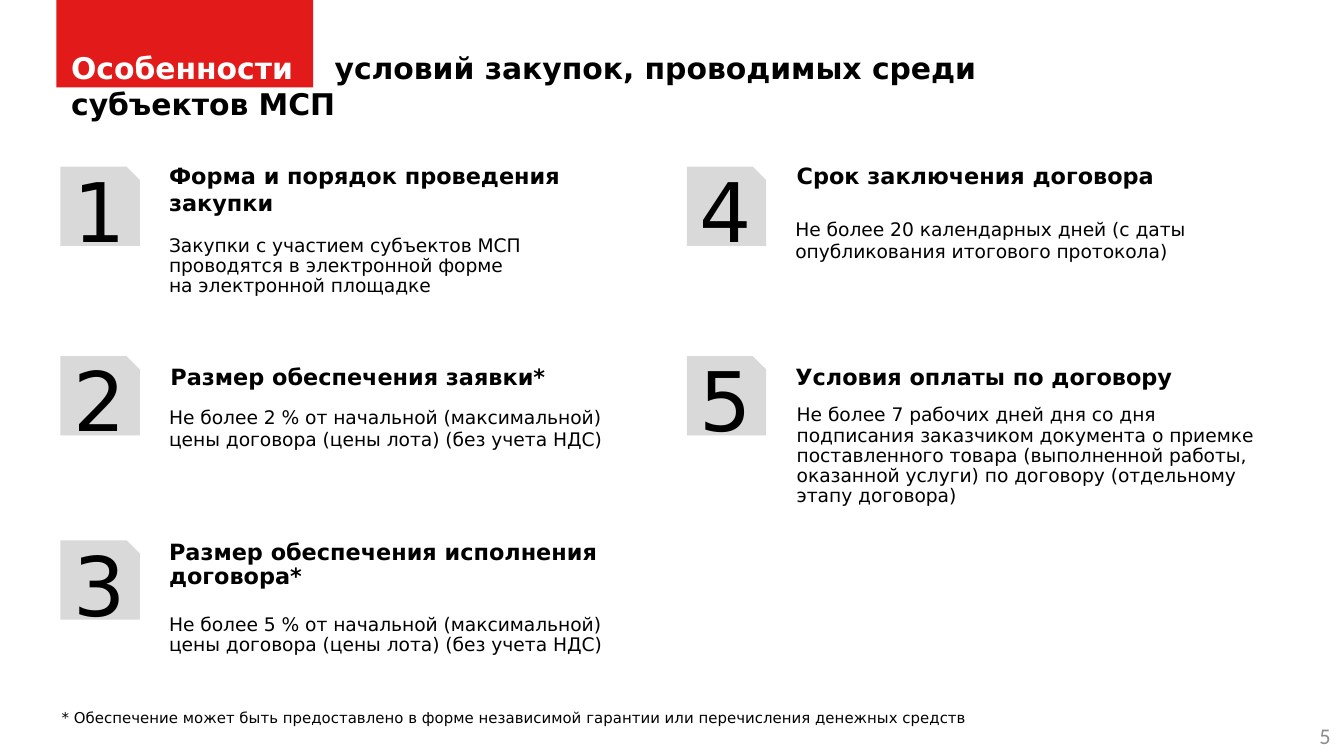
from typing import NamedTuple

from lxml.etree import SubElement
from pptx import Presentation
from pptx.dml.color import RGBColor
from pptx.enum.shapes import MSO_SHAPE
from pptx.enum.text import MSO_ANCHOR, MSO_AUTO_SIZE, PP_ALIGN
from pptx.oxml.ns import qn
from pptx.util import Inches, Pt

RED = RGBColor(0xE2, 0x1A, 0x1A)
BADGE_GRAY = RGBColor(0xD9, 0xD9, 0xD9)
NUMBER_GRAY = RGBColor(0x8C, 0x8C, 0x8C)
BLACK = RGBColor(0, 0, 0)
WHITE = RGBColor(0xFF, 0xFF, 0xFF)
MAIN_FONT = "DejaVu Sans"

COLUMN_LEFTS = (0.45, 5.11)
ROW_TOPS = (1.24, 2.65, 4.02)
ROWS = len(ROW_TOPS)
BADGE_SIZE = 0.59
TEXT_OFFSET = 0.71
TEXT_WIDTH = 3.7


class Block(NamedTuple):
    """A text with its top relative to the badge, height, spacing and shift."""
    text: str
    top: float
    height: float
    spacing: float = 1.0
    shift: float = 0.0


CONDITIONS = [
    (Block("Форма и порядок проведения закупки", -0.08, 0.51),
     Block("Закупки с участием субъектов МСП проводятся в электронной форме\n"
           "на электронной площадке", 0.47, 0.56, 0.9)),
    (Block("Размер обеспечения заявки*", 0, 0.3, shift=0.01),
     Block("Не более 2 % от начальной (максимальной) цены договора "
           "(цены лота) (без учета НДС)", 0.32, 0.44)),
    (Block("Размер обеспечения исполнения договора*", -0.04, 0.46, 0.9),
     Block("Не более 5 % от начальной (максимальной) цены договора "
           "(цены лота) (без учета НДС)", 0.51, 0.4, 0.9)),
    (Block("Срок заключения договора", -0.08, 0.3, shift=0.01),
     Block("Не более 20 календарных дней (с даты опубликования "
           "итогового протокола)", 0.33, 0.44)),
    (Block("Условия оплаты по договору", 0, 0.3),
     Block("Не более 7 рабочих дней дня со дня подписания заказчиком документа "
           "о приемке поставленного товара (выполненной работы, оказанной "
           "услуги) по договору (отдельному этапу договора)",
           0.32, 0.86, 0.9, 0.01)),
]


def add_run(paragraph, text, size, color=BLACK, bold=False, font=MAIN_FONT):
    run = paragraph.add_run()
    run.text = text
    run.font.size = Pt(size)
    run.font.name = font
    run.font.bold = bold
    run.font.color.rgb = color


def add_filled_shape(slide, preset, box, color):
    shape = slide.shapes.add_shape(preset, *map(Inches, box))
    shape.shadow.inherit = False
    shape.fill.solid()
    shape.fill.fore_color.rgb = color
    shape.line.fill.background()
    return shape


def add_text(slide, box, text, size, bold=False, spacing=1.0):
    frame = slide.shapes.add_textbox(*map(Inches, box)).text_frame
    frame.word_wrap = True
    frame.auto_size = MSO_AUTO_SIZE.SHAPE_TO_FIT_TEXT
    paragraph = frame.paragraphs[0]
    paragraph.line_spacing = spacing
    for index, line in enumerate(text.split("\n")):
        if index:
            paragraph.add_line_break()
        add_run(paragraph, line, size, bold=bold)


def add_title(slide, left, top, width, height):
    """Title whose first word stands on a red block at the slide's top edge."""
    title = slide.shapes.title
    title.left, title.top = Inches(left), Inches(top)
    title.width, title.height = Inches(width), Inches(height)
    accent = add_filled_shape(slide, MSO_SHAPE.RECTANGLE,
                              (left - 0.01, 0, 1.91, top + 0.33), RED)
    title._element.addprevious(accent._element)

    frame = title.text_frame
    frame.word_wrap = True
    frame.auto_size = MSO_AUTO_SIZE.NONE
    frame.vertical_anchor = MSO_ANCHOR.TOP
    paragraph = frame.paragraphs[0]
    paragraph.alignment = PP_ALIGN.LEFT
    paragraph.space_before = Pt(6)
    tabs = SubElement(paragraph._p.get_or_add_pPr(), qn("a:tabLst"))
    SubElement(tabs, qn("a:tab"), pos=str(Inches(1.96)), algn="l")
    add_run(paragraph, "Особенности", 16, WHITE, bold=True)
    add_run(paragraph, "\tусловий закупок, проводимых среди субъектов МСП", 16,
            bold=True)


def add_condition(slide, left, top, number, heading, details):
    badge = add_filled_shape(slide, MSO_SHAPE.SNIP_1_RECTANGLE,
                             (left, top, BADGE_SIZE, BADGE_SIZE), BADGE_GRAY)
    badge.text_frame.vertical_anchor = MSO_ANCHOR.MIDDLE
    digit = badge.text_frame.paragraphs[0]
    digit.alignment = PP_ALIGN.RIGHT
    digit._p.get_or_add_pPr().set("marL", str(Inches(0.15)))
    add_run(digit, str(number), 44)

    for block, size, bold in ((heading, 12, True), (details, 10, False)):
        box = (left + TEXT_OFFSET + block.shift, top + block.top,
               TEXT_WIDTH, block.height)
        add_text(slide, box, block.text, size, bold, block.spacing)


def add_slide_number(slide, left, top, width, height):
    frame = slide.shapes.add_textbox(
        *map(Inches, (left, top, width, height))).text_frame
    frame.word_wrap = True
    frame.vertical_anchor = MSO_ANCHOR.MIDDLE
    paragraph = frame.paragraphs[0]
    paragraph.alignment = PP_ALIGN.RIGHT
    add_run(paragraph, "5", 12, NUMBER_GRAY, font="Calibri")


def main():
    deck = Presentation()
    deck.slide_width = Inches(10)
    deck.slide_height = deck.slide_width * 9 // 16
    slide = deck.slides.add_slide(deck.slide_layouts[5])

    add_title(slide, 0.43, 0.32, 8.27, 0.64)
    for index, (heading, details) in enumerate(CONDITIONS):
        column, row = divmod(index, ROWS)
        add_condition(slide, COLUMN_LEFTS[column], ROW_TOPS[row],
                      index + 1, heading, details)
    add_text(slide, (0.36, 5.25, 8.82, 0.21),
             "* Обеспечение может быть предоставлено в форме независимой "
             "гарантии или перечисления денежных средств", 8, spacing=0.8)
    add_slide_number(slide, 7.67, 5.32, 2.33, 0.3)

    deck.save("out.pptx")


if __name__ == "__main__":
    main()
